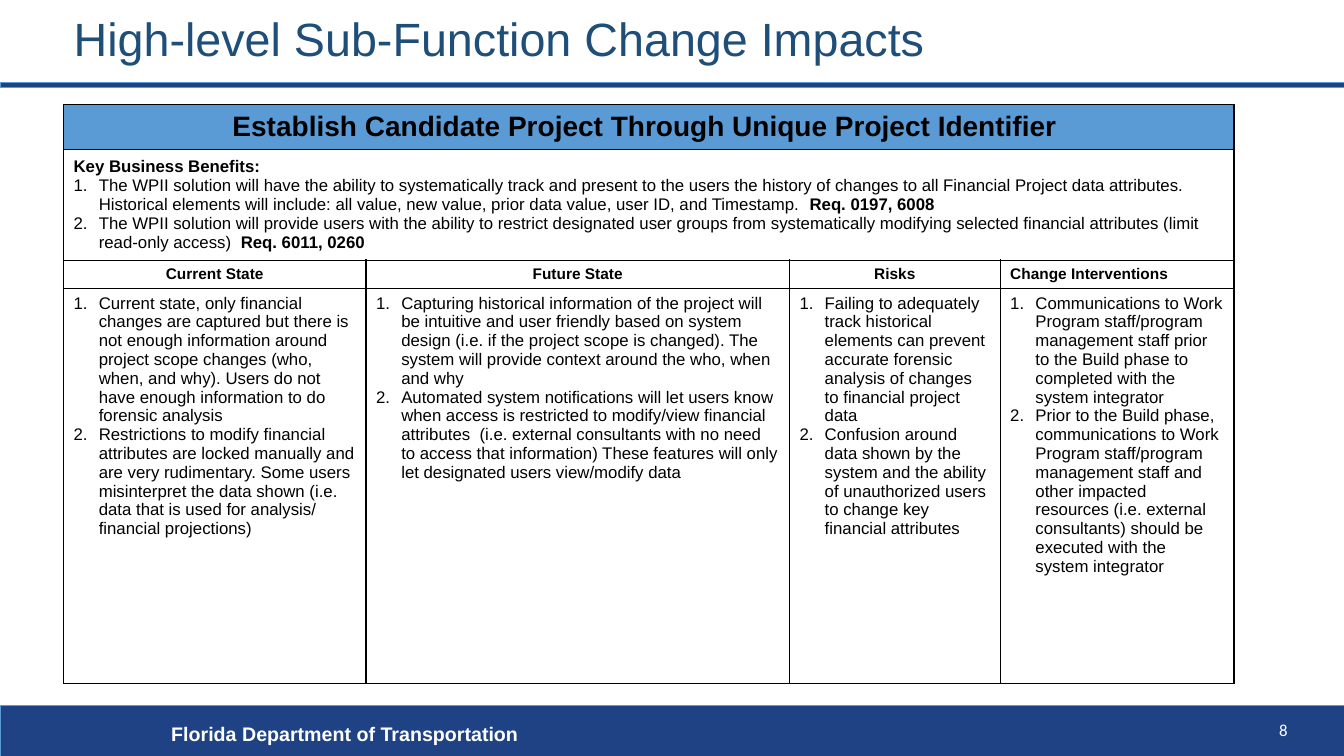
from lxml import etree
from pptx import Presentation
from pptx.dml.color import RGBColor
from pptx.enum.shapes import MSO_SHAPE
from pptx.enum.text import MSO_ANCHOR, PP_ALIGN
from pptx.oxml.ns import qn
from pptx.util import Inches, Pt

RECTANGLE = MSO_SHAPE.RECTANGLE
MIDDLE, TOP = MSO_ANCHOR.MIDDLE, MSO_ANCHOR.TOP
LEFT, CENTER, RIGHT = PP_ALIGN.LEFT, PP_ALIGN.CENTER, PP_ALIGN.RIGHT

COLORS = {
    "navy": "1F4284",
    "sky": "5B9BD5",
    "title": "1F4E79",
    "black": "000000",
    "white": "FFFFFF",
}

COLUMN_WIDTHS = [3, 4.2, 2.09, 2.32]
ROW_HEIGHTS = [0.44, 1.1, 0.28, 3.92]
HEADING = "Establish Candidate Project Through Unique Project Identifier "
BENEFITS = [
    ("The WPII solution will have the ability to systematically track and present to the users "
     "the history of changes to all Financial Project data attributes. Historical elements will "
     "include: all value, new value, prior data value, user ID, and Timestamp.  ",
     "Req. 0197, 6008"),
    ("The WPII solution will provide users with the ability to restrict designated user groups "
     "from systematically modifying selected financial attributes (limit  read-only access)  ",
     "Req. 6011, 0260"),
]
IMPACTS = [
    ("Current State", CENTER, [
        "Current state, only financial changes are captured but there is not enough information "
        "around project scope changes (who, when, and why). Users do not have enough information "
        "to do forensic analysis",
        "Restrictions to modify financial attributes are locked manually and are very "
        "rudimentary. Some users misinterpret the data shown (i.e. data that is used for "
        "analysis/ financial projections)",
    ]),
    ("Future State", CENTER, [
        "Capturing historical information of the project will be intuitive and user friendly "
        "based on system design (i.e. if the project scope is changed). The system will provide "
        "context around the who, when and why",
        "Automated system notifications will let users know when access is restricted to "
        "modify/view financial attributes  (i.e. external consultants with no need to access "
        "that information) These features will only let designated users view/modify data",
    ]),
    ("Risks", CENTER, [
        "Failing to adequately track historical elements can prevent accurate forensic analysis "
        "of changes to financial project data",
        "Confusion around data shown by the system and the ability of unauthorized users to "
        "change key financial attributes",
    ]),
    ("Change Interventions", LEFT, [
        "Communications to Work Program staff/program management staff prior to the Build phase "
        "to completed with the system integrator",
        "Prior to the Build phase, communications to Work Program staff/program management staff "
        "and other impacted resources (i.e. external consultants) should be executed with the "
        "system integrator",
    ]),
]


def color(name):
    return RGBColor.from_string(COLORS[name])


def add_run(paragraph, text, size, bold=False, ink="black", font="Arial"):
    run = paragraph.add_run()
    run.text = text
    run.font.name = font
    run.font.size = Pt(size)
    run.font.bold = bold
    run.font.color.rgb = color(ink)


def number(paragraph):
    """Give a paragraph a hanging automatic number."""
    properties = paragraph._p.get_or_add_pPr()
    properties.set("marL", str(Inches(0.25)))
    properties.set("indent", str(-Inches(0.25)))
    etree.SubElement(properties, qn("a:buFont"), typeface="+mj-lt")
    etree.SubElement(properties, qn("a:buAutoNum"), type="arabicPeriod")


def add_bar(slide, top, height):
    bar = slide.shapes.add_shape(RECTANGLE, 0, Inches(top), Inches(13.33), Inches(height))
    bar.shadow.inherit = False
    bar.fill.solid()
    bar.fill.fore_color.rgb = color("navy")
    bar.line.color.rgb = color("sky")
    bar.line.width = Pt(0.5)


def add_label(slide, text, box, size, align=LEFT, **style):
    label = slide.shapes.add_textbox(*map(Inches, box))
    label.text_frame.word_wrap = True
    paragraph = label.text_frame.paragraphs[0]
    paragraph.alignment = align
    add_run(paragraph, text, size, ink="white", **style)


def set_title(slide, text):
    title = slide.shapes.title
    title.left, title.top = Inches(0.63), Inches(0.15)
    title.width, title.height = Inches(9.08), Inches(0.56)
    title.text_frame.vertical_anchor = MIDDLE
    paragraph = title.text_frame.paragraphs[0]
    paragraph.alignment = LEFT
    paragraph.line_spacing = 0.8
    add_run(paragraph, text, 33.3, ink="title")


def outline_cell(cell):
    properties = cell._tc.get_or_add_tcPr()
    for position, side in enumerate(("lnL", "lnR", "lnT", "lnB")):
        line = etree.Element(qn(f"a:{side}"), w=str(Pt(1)))
        fill = etree.SubElement(line, qn("a:solidFill"))
        etree.SubElement(fill, qn("a:srgbClr"), val=COLORS["black"])
        properties.insert(position, line)


def fill_heading(cell, text, size, align):
    cell.vertical_anchor = MIDDLE
    paragraph = cell.text_frame.paragraphs[0]
    paragraph.alignment = align
    add_run(paragraph, text, size, bold=True)


def fill_benefits(cell):
    fill_heading(cell, "Key Business Benefits:", 12, LEFT)
    for benefit, requirements in BENEFITS:
        paragraph = cell.text_frame.add_paragraph()
        number(paragraph)
        add_run(paragraph, benefit, 12)
        add_run(paragraph, requirements, 12, bold=True)


def fill_list(cell, items):
    cell.vertical_anchor = TOP
    frame = cell.text_frame
    for index, item in enumerate(items):
        paragraph = frame.add_paragraph() if index else frame.paragraphs[0]
        number(paragraph)
        add_run(paragraph, item, 12)


def add_impact_table(slide):
    table = slide.shapes.add_table(
        len(ROW_HEIGHTS), len(COLUMN_WIDTHS), Inches(0.63), Inches(1.04),
        Inches(sum(COLUMN_WIDTHS)), Inches(sum(ROW_HEIGHTS))).table
    table.first_row = table.horz_banding = False
    for column, width in zip(table.columns, COLUMN_WIDTHS):
        column.width = Inches(width)
    for row_index, (row, height) in enumerate(zip(table.rows, ROW_HEIGHTS)):
        row.height = Inches(height)
        for cell in row.cells:
            cell.fill.solid()
            cell.fill.fore_color.rgb = color("white" if row_index else "sky")
            outline_cell(cell)
    for row_index in (0, 1):
        table.cell(row_index, 0).merge(table.cell(row_index, len(COLUMN_WIDTHS) - 1))
    fill_heading(table.cell(0, 0), HEADING, 20, CENTER)
    fill_benefits(table.cell(1, 0))
    for index, (heading, align, items) in enumerate(IMPACTS):
        fill_heading(table.cell(2, index), heading, 11, align)
        fill_list(table.cell(3, index), items)


def main():
    deck = Presentation()
    deck.slide_width, deck.slide_height = Inches(13.33), Inches(7.5)
    slide = deck.slides.add_slide(deck.slide_layouts[5])
    add_bar(slide, 7, 0.5)
    add_label(slide, "Florida Department of Transportation", (1.6, 7.11, 7.98, 0.34), 14, bold=True)
    add_bar(slide, 0.82, 0.05)
    add_label(slide, "8", (11.74, 7.09, 1.13, 0.3), 12, RIGHT, font="Calibri")
    add_impact_table(slide)
    set_title(slide, "High-level Sub-Function Change Impacts")
    deck.save("out.pptx")


if __name__ == "__main__":
    main()
